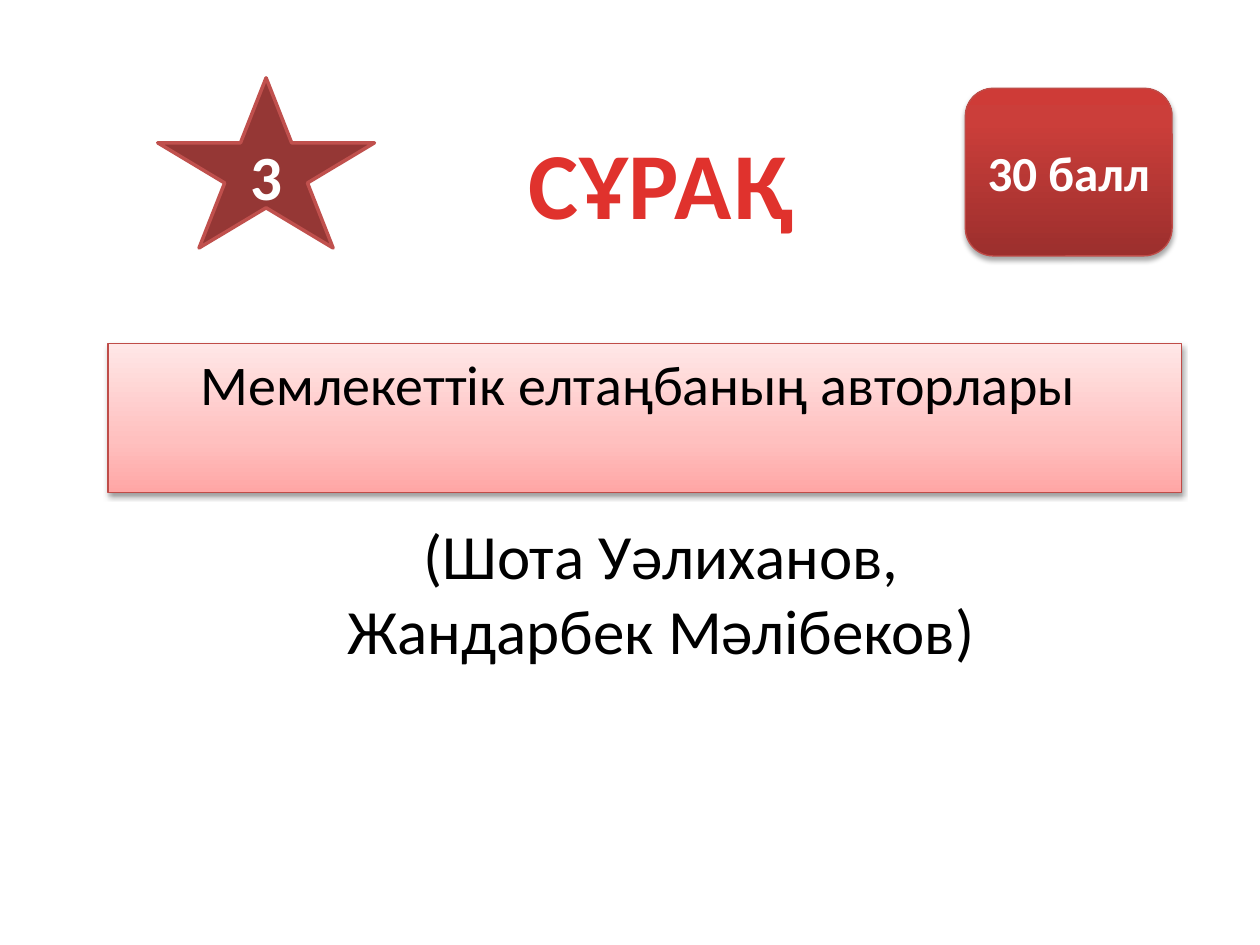
from copy import deepcopy

from lxml.etree import SubElement
from pptx import Presentation
from pptx.dml.color import RGBColor
from pptx.enum.shapes import MSO_SHAPE as Shape
from pptx.enum.text import MSO_ANCHOR as Anchor, MSO_AUTO_SIZE as AutoSize, PP_ALIGN as Align
from pptx.oxml.ns import qn
from pptx.util import Cm, Pt

FONT = "Calibri"
BLACK = RGBColor(0x00, 0x00, 0x00)
WHITE = RGBColor(0xFF, 0xFF, 0xFF)
TITLE_RED = RGBColor(0xE0, 0x32, 0x2D)
EDGE_RED = RGBColor(0xBF, 0x4C, 0x48)
STAR_FILL = RGBColor(0x95, 0x37, 0x35)
STAR_EDGE = RGBColor(0xC0, 0x50, 0x4D)
# Gradients run from bottom to top: (position, colour)
PINK_STOPS = [(0, RGBColor(0xFF, 0xA6, 0xA5)), (0.35, RGBColor(0xFF, 0xC0, 0xBF)),
              (1, RGBColor(0xFF, 0xE7, 0xE7))]
RED_STOPS = [(0, RGBColor(0x9C, 0x2F, 0x2D)), (0.8, RGBColor(0xCB, 0x3E, 0x3A)),
             (1, RGBColor(0xCE, 0x3B, 0x37))]


def write(shape, lines, size, color, anchor=Anchor.MIDDLE, bold=False):
    frame = shape.text_frame
    frame.word_wrap = True
    frame.vertical_anchor = anchor
    frame.text = "\n".join(lines)
    for para in frame.paragraphs:
        para.alignment = Align.CENTER
        for span in para.runs:
            span.font.name = FONT
            span.font.size = Pt(size)
            span.font.bold = bold
            span.font.color.rgb = color
    return frame


def add_outlined(page, kind, box, edge, width):
    shape = page.shapes.add_shape(kind, *box)
    shape.shadow.inherit = False
    shape.line.color.rgb = edge
    shape.line.width = Pt(width)
    return shape


def fill_gradient(shape, stops):
    shape.fill.gradient()
    shape.fill.gradient_angle = 90
    stop_list = shape._element.spPr.find(".//" + qn("a:gsLst"))
    while len(stop_list) < len(stops):
        stop_list.append(deepcopy(stop_list[0]))
    for stop, (position, color) in zip(shape.fill.gradient_stops, stops):
        stop.position = position
        stop.color.rgb = color


def drop_shadow(shape, distance, opacity):
    effects = shape._element.spPr.find(qn("a:effectLst"))
    shadow = SubElement(effects, qn("a:outerShdw"), blurRad=str(Pt(3.1)),
                        dist=str(Pt(distance)), dir="5400000", rotWithShape="0")
    color = SubElement(shadow, qn("a:srgbClr"), val="000000")
    SubElement(color, qn("a:alpha"), val=str(opacity * 1000))


def add_question(page, box):
    panel = add_outlined(page, Shape.RECTANGLE, box, EDGE_RED, 0.75)
    fill_gradient(panel, PINK_STOPS)
    drop_shadow(panel, 1.6, 38)
    write(panel, ["Мемлекеттік елтаңбаның авторлары "], 32, BLACK, Anchor.TOP)


def add_answer(page, box):
    answer = page.shapes.add_textbox(*box)
    frame = write(answer, ["(Шота Уәлиханов, ", "Жандарбек Мәлібеков) "], 36, BLACK, Anchor.TOP)
    frame.margin_top = Cm(0.28)


def add_points(page, box):
    badge = add_outlined(page, Shape.ROUNDED_RECTANGLE, box, EDGE_RED, 0.75)
    fill_gradient(badge, RED_STOPS)
    drop_shadow(badge, 1.8, 35)
    write(badge, ["30 балл"], 28, WHITE, bold=True)


def add_number(page, box):
    star = add_outlined(page, Shape.STAR_5_POINT, box, STAR_EDGE, 2)
    star.fill.solid()
    star.fill.fore_color.rgb = STAR_FILL
    write(star, ["3"], 36, WHITE, bold=True)


def place_title(page, box):
    title = page.shapes.title
    title.left, title.top, title.width, title.height = box
    frame = write(title, ["СҰРАҚ"], 54, TITLE_RED, Anchor.TOP, bold=True)
    frame.word_wrap = False
    frame.auto_size = AutoSize.SHAPE_TO_FIT_TEXT
    frame.paragraphs[0].runs[0].font._element.set("spc", "50")


def main():
    deck = Presentation()
    deck.slide_width, deck.slide_height = Cm(25.4), Cm(19.05)
    page = deck.slides.add_slide(deck.slide_layouts[5])

    # Question and its answer
    add_question(page, (Cm(2.18), Cm(6.93), Cm(21.64), Cm(3)))
    add_answer(page, (Cm(6.5), Cm(10.13), Cm(13.94), Cm(5.21)))

    # Header: points, question number, title
    add_points(page, (Cm(19.46), Cm(1.78), Cm(4.17), Cm(3.38)))
    add_number(page, (Cm(3.18), Cm(1.57), Cm(4.37), Cm(3.43)))
    place_title(page, (Cm(10.36), Cm(2.39), Cm(5.89), Cm(2.57)))

    deck.save("out.pptx")


if __name__ == "__main__":
    main()
